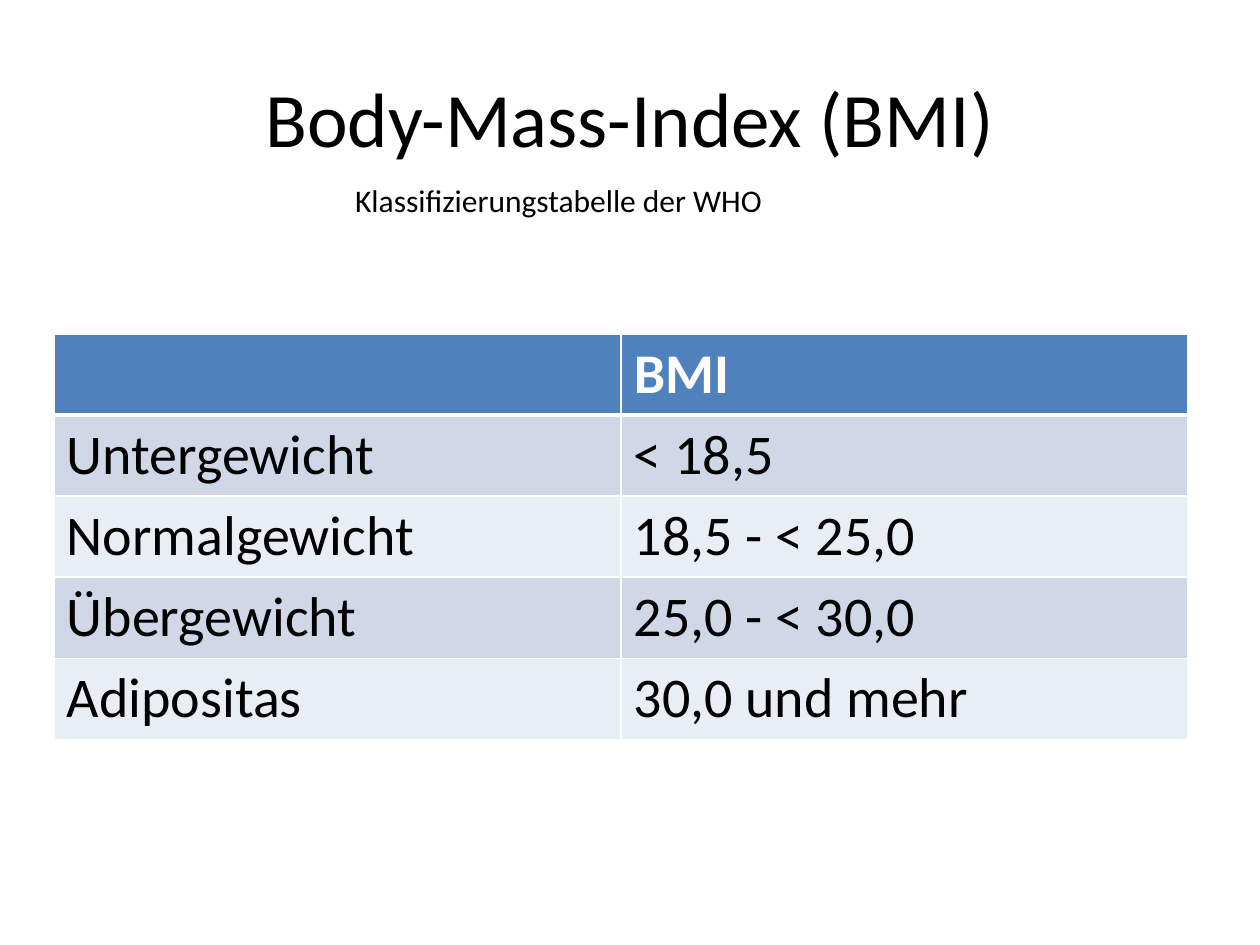
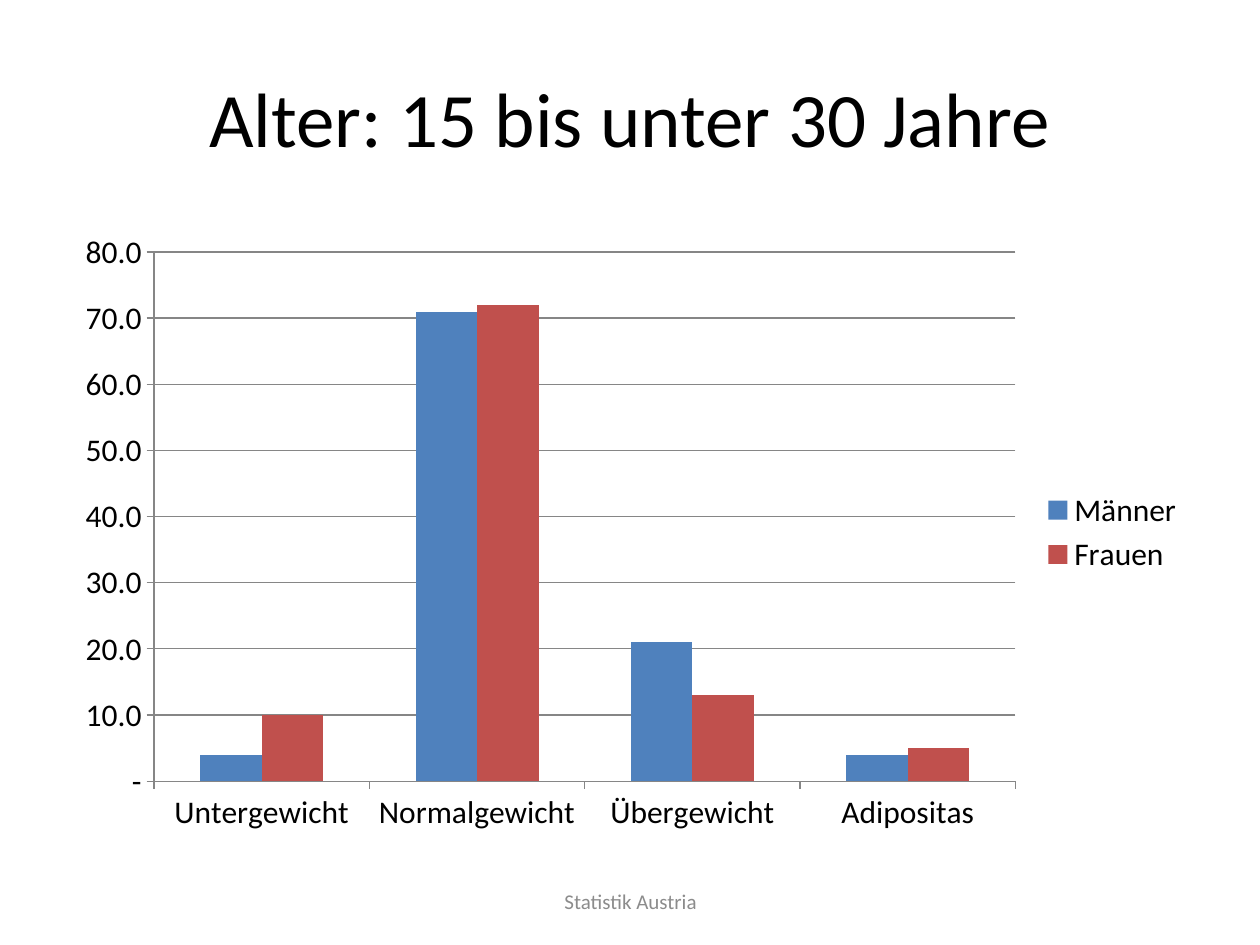
from dataclasses import dataclass

from lxml.etree import SubElement
from pptx import Presentation
from pptx.chart.data import CategoryChartData
from pptx.dml.color import RGBColor
from pptx.enum.chart import XL_CHART_TYPE as ChartType
from pptx.enum.chart import XL_LEGEND_POSITION as LegendPosition
from pptx.enum.chart import XL_TICK_MARK as TickMark
from pptx.enum.text import MSO_ANCHOR as Anchor
from pptx.enum.text import MSO_AUTO_SIZE as AutoSize
from pptx.enum.text import PP_ALIGN as Align
from pptx.oxml.ns import qn
from pptx.util import Inches, Pt

# Shared look
FONT = "Calibri"
BLACK, WHITE, GREY, AXIS_GREY = "000000", "FFFFFF", "8C8C8C", "868686"
BLUE, RED = "4F81BD", "C0504D"
BANDS = ("D0D8E8", "E9EDF4")
WIDTH, HEIGHT = Inches(10), Inches(7.5)
COLUMNS, ROWS = 20, 15


@dataclass(frozen=True)
class Area:
    """A place on the slide, in grid columns and rows."""
    column: float
    row: float
    columns: float
    rows: float

    def lengths(self) -> tuple:
        across, down = WIDTH / COLUMNS, HEIGHT / ROWS
        return (round(self.column * across), round(self.row * down),
                round(self.columns * across), round(self.rows * down))


@dataclass(frozen=True)
class Group:
    name: str
    shares: tuple
    color: str


TITLE = Area(1, 0.6, 18, 2.5)
SUBTITLE = Area(5.44, 2.78, 9.76, 0.8)
BMI_TABLE = Area(0.86, 5.3, 18, 6.4)
AGE_CHART = Area(1, 3.5, 18, 9.9)
SOURCE = Area(6.84, 13.9, 6.34, 0.8)

BMI_CLASSES = (
    ("Untergewicht", "< 18,5"),
    ("Normalgewicht", "18,5 - < 25,0"),
    ("Übergewicht", "25,0 - < 30,0"),
    ("Adipositas", "30,0 und mehr"),
)
GROUPS = (
    Group("Männer", (4, 71, 21, 4), BLUE),
    Group("Frauen", (10, 72, 13, 5), RED),
)


def rgb(color: str) -> RGBColor:
    return RGBColor.from_string(color)


def style_font(font, size: float, color: str, bold: bool = False) -> None:
    font.name, font.size, font.bold = FONT, Pt(size), bold
    font.color.rgb = rgb(color)


def write(frame, text: str, *, size: float = 18, color: str = BLACK,
          bold: bool = False, align=Align.LEFT) -> None:
    paragraph = frame.paragraphs[0]
    paragraph.alignment = align
    run = paragraph.add_run()
    run.text = text
    style_font(run.font, size, color, bold)


def add_text(slide, area: Area, text: str, *, anchor=Anchor.TOP,
             fit=AutoSize.NONE, **text_format) -> None:
    frame = slide.shapes.add_textbox(*area.lengths()).text_frame
    frame.word_wrap = True
    frame.auto_size = fit
    frame.vertical_anchor = anchor
    write(frame, text, **text_format)


def add_titled_slide(deck, title: str):
    slide = deck.slides.add_slide(deck.slide_layouts[6])
    slide.background.fill.solid()
    slide.background.fill.fore_color.rgb = rgb(WHITE)
    add_text(slide, TITLE, title, anchor=Anchor.MIDDLE, size=44,
             align=Align.CENTER)
    return slide


def add_borders(cell, top: float = 1, bottom: float = 1) -> None:
    properties = cell._tc.get_or_add_tcPr()
    for side, points in (("L", 1), ("R", 1), ("T", top), ("B", bottom)):
        line = SubElement(properties, qn(f"a:ln{side}"), w=str(Pt(points)))
        fill = SubElement(line, qn("a:solidFill"))
        SubElement(fill, qn("a:srgbClr"), val=WHITE)


def add_bmi_table(slide) -> None:
    rows = (("", "BMI"), *BMI_CLASSES)
    table = slide.shapes.add_table(len(rows), 2, *BMI_TABLE.lengths()).table
    for row, texts in enumerate(rows):
        header = row == 0
        for column, text in enumerate(texts):
            cell = table.cell(row, column)
            # The line below the header is thicker
            add_borders(cell, top=3 if row == 1 else 1,
                        bottom=3 if header else 1)
            cell.fill.solid()
            cell.fill.fore_color.rgb = rgb(
                BLUE if header else BANDS[(row - 1) % 2])
            if text:
                write(cell.text_frame, text, size=32, bold=header,
                      color=WHITE if header else BLACK)


def add_age_chart(slide) -> None:
    data = CategoryChartData()
    data.categories = [name for name, _ in BMI_CLASSES]
    for group in GROUPS:
        data.add_series(group.name, group.shares)
    chart = slide.shapes.add_chart(
        ChartType.COLUMN_CLUSTERED, *AGE_CHART.lengths(), data).chart
    style_font(chart.font, 18, BLACK)
    chart.has_title = False

    # Columns
    plot = chart.plots[0]
    plot.gap_width, plot.overlap, plot.vary_by_categories = 150, 0, False
    for group, series in zip(GROUPS, plot.series):
        series.format.fill.solid()
        series.format.fill.fore_color.rgb = rgb(group.color)

    # Axes and gridlines
    weights, shares = chart.category_axis, chart.value_axis
    shares.minimum_scale, shares.maximum_scale, shares.major_unit = 0, 80, 10
    shares.has_major_gridlines = True
    shares.tick_labels.number_format = '#,##0.0;#,##0.0;"-"'
    shares.tick_labels.number_format_is_linked = False
    for axis in (weights, shares):
        axis.major_tick_mark = TickMark.OUTSIDE
        axis.minor_tick_mark = TickMark.NONE
    for lined in (weights, shares, shares.major_gridlines):
        lined.format.line.color.rgb = rgb(AXIS_GREY)
        lined.format.line.width = Pt(0.75)

    # Legend
    chart.has_legend = True
    chart.legend.position = LegendPosition.RIGHT
    chart.legend.include_in_layout = False


def main() -> None:
    deck = Presentation()
    deck.slide_width, deck.slide_height = WIDTH, HEIGHT

    # BMI classes
    classes = add_titled_slide(deck, "Body-Mass-Index (BMI)")
    add_bmi_table(classes)
    add_text(classes, SUBTITLE, "Klassifizierungstabelle der WHO",
             fit=AutoSize.SHAPE_TO_FIT_TEXT)

    # Young adults
    young = add_titled_slide(deck, "Alter: 15 bis unter 30 Jahre")
    add_age_chart(young)
    add_text(young, SOURCE, "Statistik Austria", anchor=Anchor.MIDDLE,
             size=12, color=GREY, align=Align.CENTER)

    deck.save("out.pptx")


if __name__ == "__main__":
    main()
